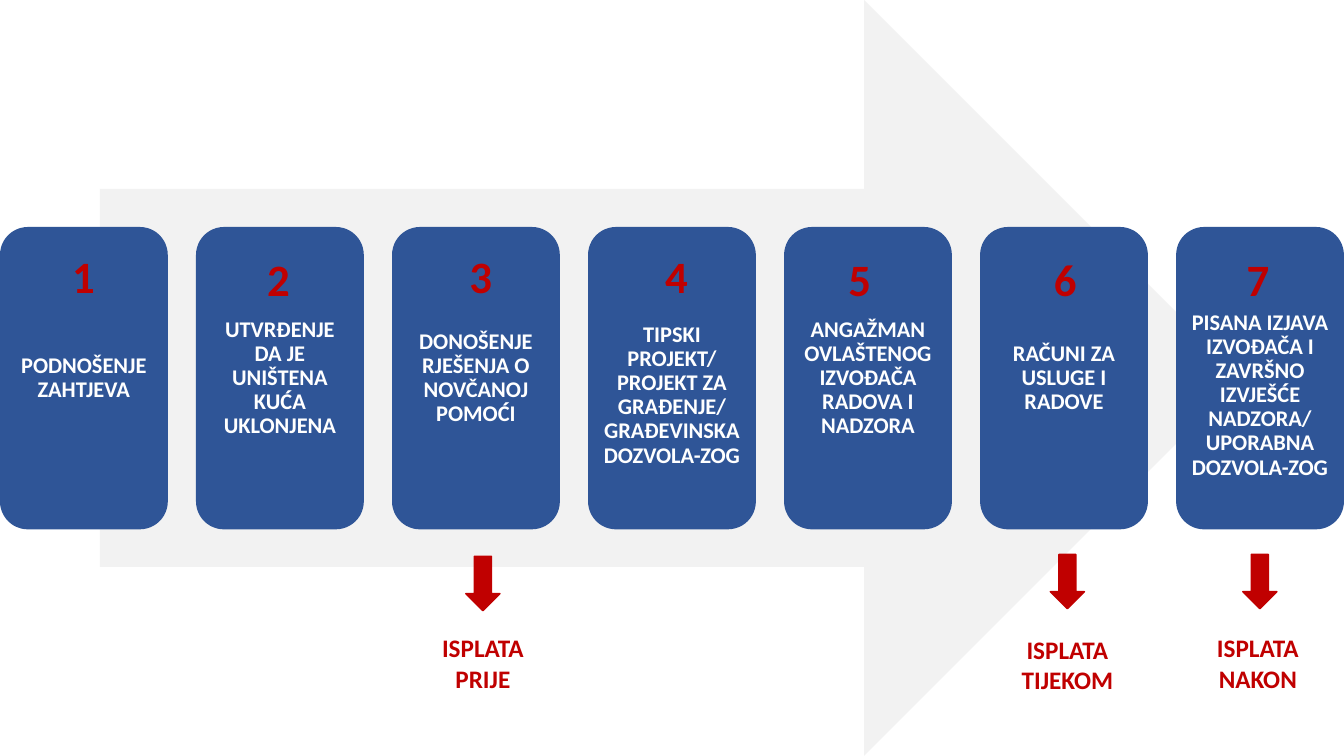
from dataclasses import dataclass

from pptx import Presentation
from pptx.dml.color import RGBColor
from pptx.enum import shapes, text
from pptx.util import Cm, Pt

# Content: number, its left and top (cm), wording, extra top inset (cm)
STEPS = [
    ("1", 1.57, 6.15, "PODNOŠENJE ZAHTJEVA", 0),
    ("2", 6.48, 6.22, "UTVRĐENJE DA JE UNIŠTENA KUĆA UKLONJENA", 0),
    ("3", 11.58, 6.15, "DONOŠENJE RJEŠENJA O NOVČANOJ POMOĆI", 0),
    ("4", 16.51, 6.15, "TIPSKI PROJEKT/ PROJEKT ZA GRAĐENJE/ GRAĐEVINSKA DOZVOLA-ZOG", 0.87),
    ("5", 21.13, 6.22, "ANGAŽMAN OVLAŠTENOG IZVOĐAČA RADOVA I NADZORA", 0),
    ("6", 26.31, 6.22, "RAČUNI ZA USLUGE I RADOVE", 0),
    ("7", 31.17, 6.22, "PISANA IZJAVA IZVOĐAČA I ZAVRŠNO IZVJEŠĆE NADZORA/ "
     "UPORABNA DOZVOLA-ZOG", 0.87),
]
# Payments: wording, arrow centre and top, label centre and top (cm)
PAYMENTS = [
    ("ISPLATA PRIJE", 12.17, 14.02, 12.17, 15.82),
    ("ISPLATA TIJEKOM", 26.9, 13.97, 26.9, 15.85),
    ("ISPLATA NAKON", 31.75, 13.97, 31.7, 15.82),
]


@dataclass
class Theme:
    font: str = "Calibri"
    arrow: str = "F2F2F2"
    card: str = "2F5597"
    accent: str = "C00000"
    light: str = "FFFFFF"
    step_size: int = 16
    number_size: int = 32
    payment_size: int = 18


THEME = Theme()
SLIDE_WIDTH, SLIDE_HEIGHT = 33.87, 19.05
CARD_WIDTH, CARD_HEIGHT, CARD_TOP = 4.23, 7.62, 5.72
CARD_INSET = 0.17
PAYMENT_ARROW_WIDTH, PAYMENT_ARROW_HEIGHT = 0.86, 1.37
LABEL_WIDTH, LABEL_HEIGHT = 3.1, 1.8
NUMBER_WIDTH, NUMBER_HEIGHT = 1.17, 1.63


def write(shape, words, *, size, color, align=text.PP_ALIGN.CENTER,
          anchor=text.MSO_ANCHOR.TOP, spacing=None):
    frame = shape.text_frame
    frame.word_wrap = True
    frame.vertical_anchor = anchor
    paragraph = frame.paragraphs[0]
    paragraph.text = words
    paragraph.alignment = align
    if spacing:
        paragraph.line_spacing = spacing
    font = paragraph.font
    font.name, font.size, font.bold = THEME.font, Pt(size), True
    font.color.rgb = RGBColor.from_string(color)


def add_filled(slide, preset, box, color, outlined=False):
    shape = slide.shapes.add_shape(preset, *map(Cm, box))
    shape.shadow.inherit = False
    shape.fill.solid()
    shape.fill.fore_color.rgb = RGBColor.from_string(color)
    if outlined:
        shape.line.color.rgb = RGBColor.from_string(color)
        shape.line.width = Pt(1)
    else:
        shape.line.fill.background()
    return shape


def add_label(slide, words, box, **style):
    write(slide.shapes.add_textbox(*map(Cm, box)), words, color=THEME.accent, **style)


def main():
    presentation = Presentation()
    presentation.slide_width, presentation.slide_height = Cm(SLIDE_WIDTH), Cm(SLIDE_HEIGHT)
    slide = presentation.slides.add_slide(presentation.slide_layouts[6])
    preset = shapes.MSO_SHAPE

    # Background arrow
    add_filled(slide, preset.RIGHT_ARROW, (2.52, 0, 28.78, SLIDE_HEIGHT), THEME.arrow)

    # Step cards, spread evenly over the full width
    pitch = (SLIDE_WIDTH - CARD_WIDTH) / (len(STEPS) - 1)
    for index, (number, left, top, words, extra_inset) in enumerate(STEPS):
        card = add_filled(slide, preset.ROUNDED_RECTANGLE,
                          (index * pitch, CARD_TOP, CARD_WIDTH, CARD_HEIGHT), THEME.card)
        frame = card.text_frame
        frame.margin_left = frame.margin_right = frame.margin_bottom = Cm(CARD_INSET)
        frame.margin_top = Cm(CARD_INSET + extra_inset)
        write(card, words, size=THEME.step_size, color=THEME.light,
              anchor=text.MSO_ANCHOR.MIDDLE, spacing=0.9)
        add_label(slide, number, (left, top, NUMBER_WIDTH, NUMBER_HEIGHT),
                  size=THEME.number_size, align=text.PP_ALIGN.LEFT)

    # Payment arrows and labels
    for words, arrow_centre, arrow_top, label_centre, label_top in PAYMENTS:
        add_filled(slide, preset.DOWN_ARROW,
                   (arrow_centre - PAYMENT_ARROW_WIDTH / 2, arrow_top,
                    PAYMENT_ARROW_WIDTH, PAYMENT_ARROW_HEIGHT), THEME.accent, outlined=True)
        add_label(slide, words, (label_centre - LABEL_WIDTH / 2, label_top,
                                 LABEL_WIDTH, LABEL_HEIGHT), size=THEME.payment_size)

    presentation.save("out.pptx")


if __name__ == "__main__":
    main()
